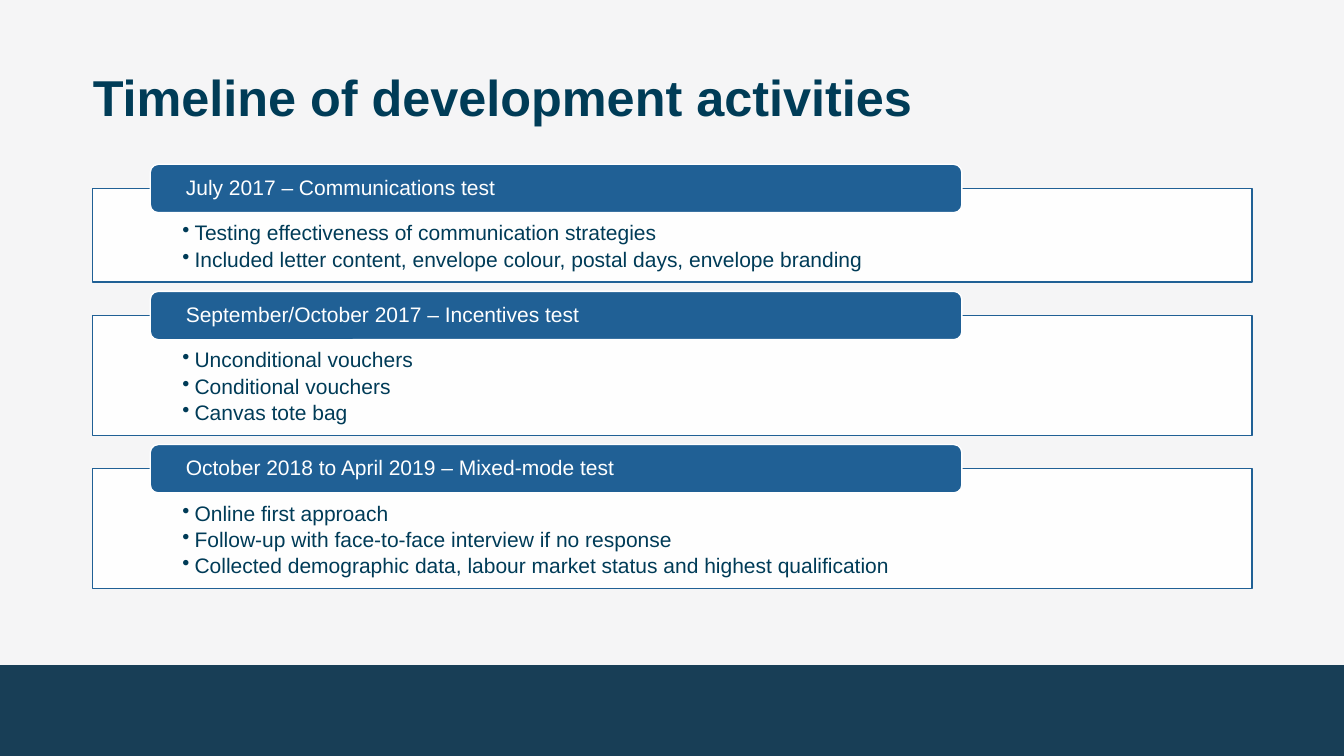
from lxml.etree import SubElement
from pptx import Presentation
from pptx.dml.color import RGBColor
from pptx.enum.shapes import MSO_SHAPE as Shape
from pptx.enum.text import MSO_ANCHOR as Anchor, MSO_AUTO_SIZE as AutoSize, PP_ALIGN as Align
from pptx.oxml.ns import qn
from pptx.util import Inches, Pt

PAPER = RGBColor(0xF5, 0xF5, 0xF6)
WHITE = RGBColor(0xFF, 0xFF, 0xFF)
BLUE = RGBColor(0x20, 0x60, 0x95)
NAVY = RGBColor(0x18, 0x3E, 0x56)
TITLE_INK = RGBColor(0x00, 0x3C, 0x57)
BODY_INK = RGBColor(0x00, 0x3B, 0x57)

PAGE_WIDTH, PAGE_HEIGHT = 13.33, 7.5
LEFT, WIDTH = 0.92, 11.5
FIRST_TOP, GAP = 1.87, 0.33
PADDING, LINE_HEIGHT = 0.41, 0.26

TITLE_FONT = {"name": "Arial", "size": Pt(36), "bold": True}
BODY_FONT = {"name": "Arial", "size": Pt(15), "bold": False}

STAGES = [
    ("July 2017 – Communications test", [
        "Testing effectiveness of communication strategies",
        "Included letter content, envelope colour, postal days, envelope branding",
    ]),
    ("September/October 2017 – Incentives test", [
        "Unconditional vouchers",
        "Conditional vouchers",
        "Canvas tote bag",
    ]),
    ("October 2018 to April 2019 – Mixed-mode test", [
        "Online first approach",
        "Follow-up with face-to-face interview if no response",
        "Collected demographic data, labour market status and highest qualification",
    ]),
]


def apply(target, formats):
    for name, value in formats.items():
        setattr(target, name, value)


def add_box(page, kind, left, top, width, height, fill, line=None):
    box = page.shapes.add_shape(kind, *map(Inches, (left, top, width, height)))
    box.shadow.inherit = False
    box.fill.solid()
    box.fill.fore_color.rgb = fill
    if line is None:
        box.line.fill.background()
    else:
        box.line.color.rgb = line
        box.line.width = Pt(1)
    return box


def set_frame(frame, anchor, left=0, top=0, right=0, bottom=0):
    apply(frame, {
        "word_wrap": True, "auto_size": AutoSize.NONE, "vertical_anchor": anchor,
        "margin_left": Inches(left), "margin_top": Inches(top),
        "margin_right": Inches(right), "margin_bottom": Inches(bottom),
    })


def write(para, text, formats, color, spacing, after=0):
    apply(para, {"alignment": Align.LEFT, "line_spacing": spacing,
                 "space_before": Pt(0), "space_after": Pt(after)})
    span = para.add_run()
    span.text = text
    apply(span.font, formats)
    span.font.color.rgb = color


def add_bullet(para):
    props = para._p.get_or_add_pPr()
    props.set("marL", str(Inches(0.12)))
    props.set("indent", str(Inches(-0.12)))
    SubElement(props, qn("a:buChar")).set("char", "•")


def add_title(page, text, left, top, width, height):
    title = page.shapes.title
    apply(title, {"left": Inches(left), "top": Inches(top),
                  "width": Inches(width), "height": Inches(height)})
    set_frame(title.text_frame, Anchor.TOP)
    write(title.text_frame.paragraphs[0], text, TITLE_FONT, TITLE_INK, 0.95)


def add_stage(page, heading, points, left, top, width, height):
    panel = add_box(page, Shape.RECTANGLE, left, top, width, height, WHITE, BLUE)
    color = panel.fill._xPr.find(".//" + qn("a:srgbClr"))
    SubElement(color, qn("a:alpha")).set("val", "90000")
    frame = panel.text_frame
    set_frame(frame, Anchor.TOP, 0.89, 0.34, 0.89, 0.12)
    for index, point in enumerate(points):
        para = frame.add_paragraph() if index else frame.paragraphs[0]
        add_bullet(para)
        write(para, point, BODY_FONT, BODY_INK, 0.9, 2.6)

    tab = add_box(page, Shape.ROUNDED_RECTANGLE, left + 0.57, top - 0.24,
                  width * 0.7, 0.48, BLUE, WHITE)
    set_frame(tab.text_frame, Anchor.MIDDLE, 0.33, 0, 0.33, 0)
    write(tab.text_frame.paragraphs[0], heading, BODY_FONT, WHITE, 0.9)


def add_timeline(page, stages, left, top, width):
    for heading, points in stages:
        height = PADDING + LINE_HEIGHT * len(points)
        add_stage(page, heading, points, left, top, width, height)
        top += height + GAP


def main():
    deck = Presentation()
    deck.slide_width, deck.slide_height = Inches(PAGE_WIDTH), Inches(PAGE_HEIGHT)
    page = deck.slides.add_slide(deck.slide_layouts.get_by_name("Title Only"))
    page.background.fill.solid()
    page.background.fill.fore_color.rgb = PAPER
    add_box(page, Shape.RECTANGLE, 0, 6.6, PAGE_WIDTH, 0.9, NAVY)
    add_title(page, "Timeline of development activities", LEFT, 0.7, WIDTH, 0.58)
    add_timeline(page, STAGES, LEFT, FIRST_TOP, WIDTH)
    deck.save("out.pptx")


if __name__ == "__main__":
    main()
